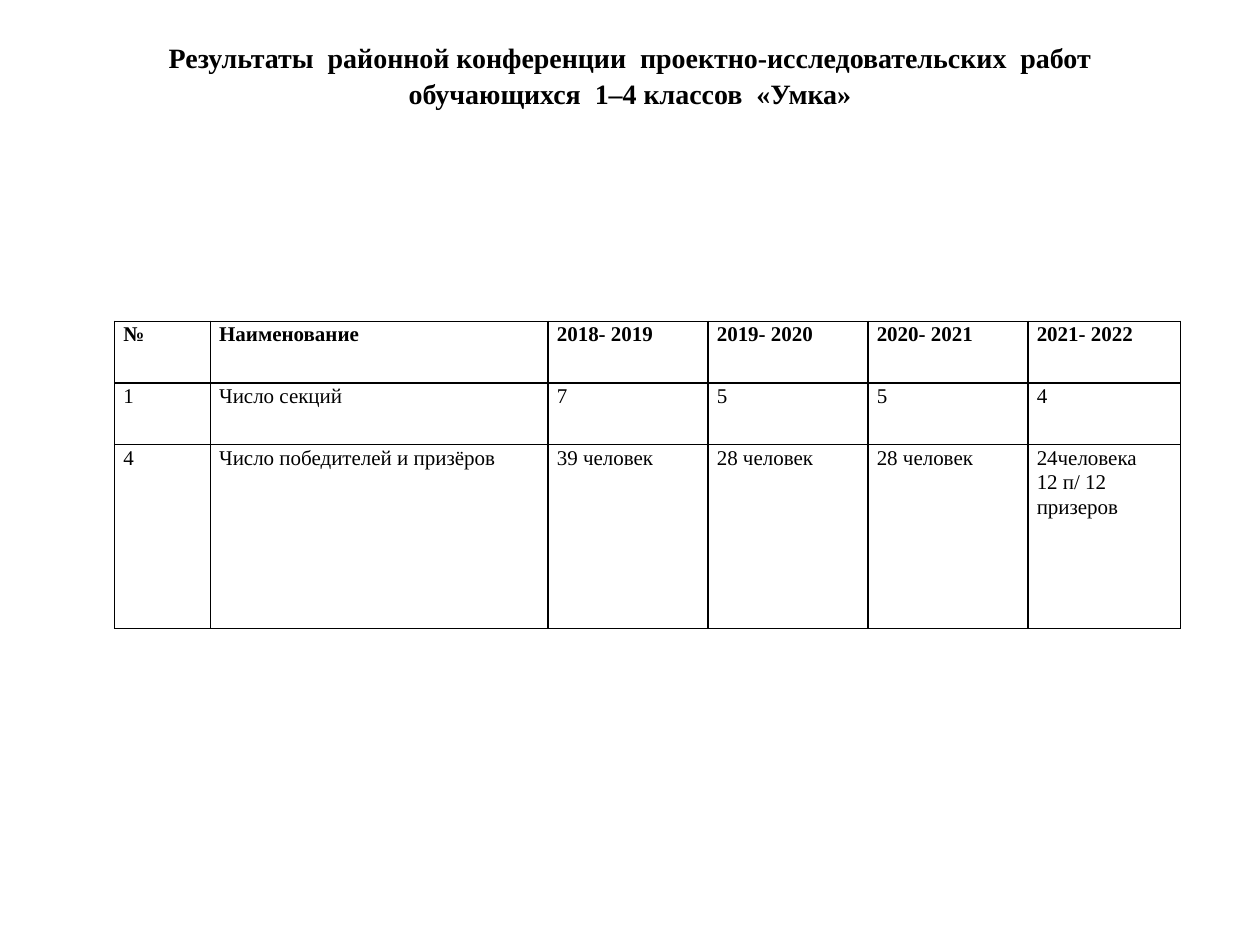
"""Build the slide with the results of the «Умка» school conference."""
from dataclasses import dataclass

from lxml import etree
from pptx import Presentation
from pptx.dml.color import RGBColor
from pptx.enum.text import MSO_ANCHOR, MSO_AUTO_SIZE, PP_ALIGN
from pptx.oxml.ns import qn
from pptx.util import Inches, Pt

CENTER, LEFT = PP_ALIGN.CENTER, PP_ALIGN.LEFT
MIDDLE, TOP = MSO_ANCHOR.MIDDLE, MSO_ANCHOR.TOP
NO_AUTOFIT = MSO_AUTO_SIZE.NONE
TITLE_ONLY = 5

TITLE = (
    "Результаты  районной конференции  проектно-исследовательских  работ "
    "обучающихся  1–4 классов  «Умка»"
)
ROWS = [
    ["№", "Наименование", "2018- 2019", "2019- 2020", "2020- 2021", "2021- 2022"],
    ["1", "Число секций", "7", "5", "5", "4"],
    ["4", "Число победителей и призёров", "39 человек", "28 человек",
     "28 человек", "24человека\n12 п/ 12 призеров"],
]
COL_WIDTHS = [0.76, 2.68, 1.27, 1.27, 1.27, 1.21]
ROW_HEIGHTS = [0.49, 0.49, 1.46]


@dataclass(frozen=True)
class Theme:
    """Colours, font and sizes of the slide."""
    font: str = "Times New Roman"
    ink: str = "000000"
    title_size: int = 16
    table_size: int = 12
    line_spacing: float = 1.07
    border_width: int = 1
    cell_margin: float = 0.07


class SlideBuilder:
    """Adds styled elements to one slide."""

    def __init__(self, slide, theme):
        self.slide = slide
        self.theme = theme

    def set_text(self, tf, text, size, bold, align):
        """Set the text of a frame and format its runs."""
        tf.text = text
        for p in tf.paragraphs:
            p.alignment = align
            p.line_spacing = self.theme.line_spacing
            p.space_before = Pt(0)
            for r in p.runs:
                r.font.name = self.theme.font
                r.font.size = Pt(size)
                r.font.bold = bold
                r.font.color.rgb = RGBColor.from_string(self.theme.ink)

    def title(self, text, left, top, width, height):
        """Place and fill the title placeholder."""
        sp = self.slide.shapes.title
        sp.left, sp.top = Inches(left), Inches(top)
        sp.width, sp.height = Inches(width), Inches(height)
        tf = sp.text_frame
        tf.word_wrap = True
        tf.auto_size = NO_AUTOFIT
        tf.vertical_anchor = MIDDLE
        self.set_text(tf, text, self.theme.title_size, True, CENTER)

    def border(self, cell):
        """Draw a solid line on all four sides of a cell."""
        tc_pr = cell._tc.get_or_add_tcPr()
        for side in ("lnL", "lnR", "lnT", "lnB"):
            ln = etree.SubElement(
                tc_pr, qn(f"a:{side}"), w=str(Pt(self.theme.border_width)))
            fill = etree.SubElement(ln, qn("a:solidFill"))
            etree.SubElement(fill, qn("a:srgbClr"), val=self.theme.ink)

    def table(self, rows, left, top, widths, heights):
        """Add a ruled table whose first row is bold."""
        frame = self.slide.shapes.add_table(
            len(rows), len(widths), Inches(left), Inches(top),
            Inches(sum(widths)), Inches(sum(heights)))
        table = frame.table
        table.first_row = table.horz_banding = False
        for column, width in zip(table.columns, widths):
            column.width = Inches(width)
        for row, height in zip(table.rows, heights):
            row.height = Inches(height)
        for i, values in enumerate(rows):
            for j, text in enumerate(values):
                cell = table.cell(i, j)
                cell.margin_left = cell.margin_right = Inches(self.theme.cell_margin)
                cell.margin_top = cell.margin_bottom = 0
                cell.vertical_anchor = TOP
                self.border(cell)
                cell.fill.background()
                self.set_text(cell.text_frame, text, self.theme.table_size, i == 0, LEFT)


def main():
    """Create the presentation and save it."""
    prs = Presentation()
    prs.slide_width, prs.slide_height = Inches(10), Inches(7.5)
    s = prs.slides.add_slide(prs.slide_layouts[TITLE_ONLY])
    builder = SlideBuilder(s, Theme())
    builder.title(TITLE, 0.69, 0.27, 8.62, 0.63)
    builder.table(ROWS, 0.91, 2.55, COL_WIDTHS, ROW_HEIGHTS)
    prs.save("out.pptx")


if __name__ == "__main__":
    main()
